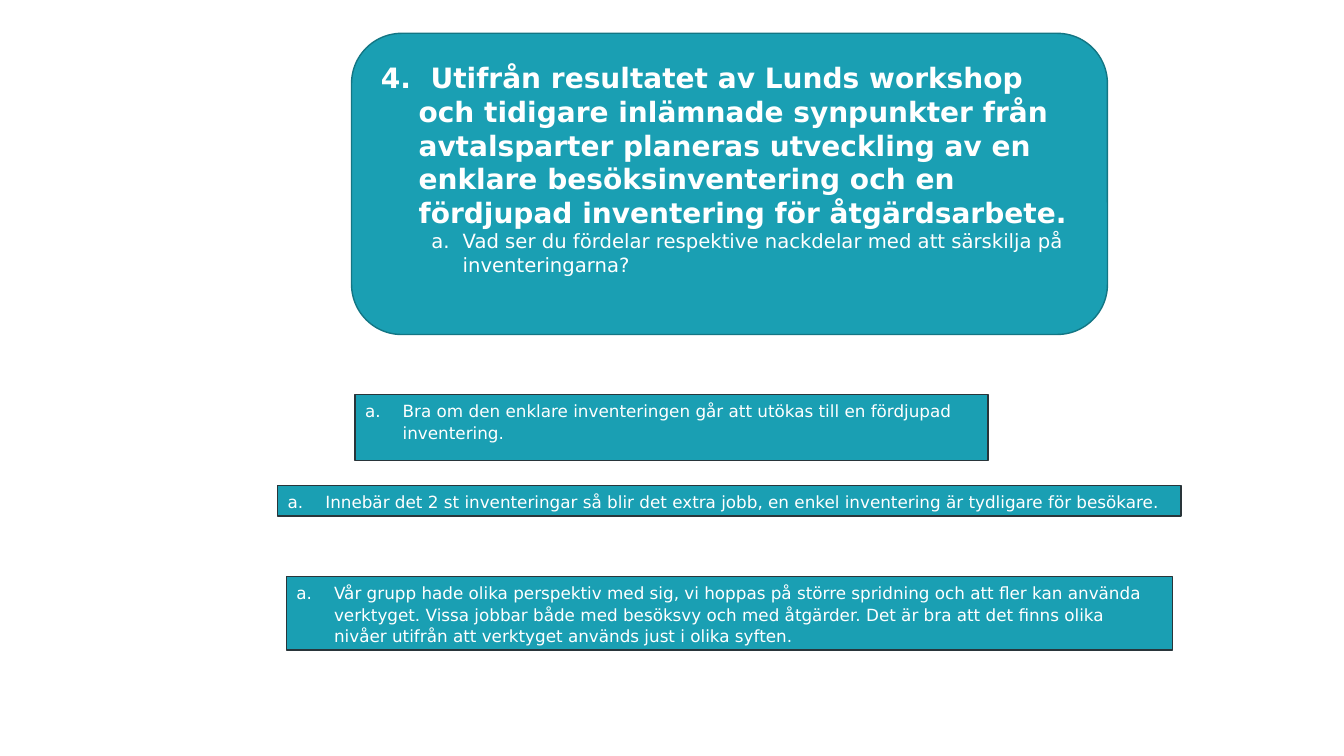
"""Builds a slide with a workshop question and three group answers."""
import pptx
import pptx.dml.color
import pptx.enum.shapes
import pptx.enum.text
import pptx.oxml.ns
import pptx.util
from lxml import etree

Cm = pptx.util.Cm
Pt = pptx.util.Pt
SHAPES = pptx.enum.shapes.MSO_SHAPE

FONT = "DejaVu Sans"
TEAL, DARK_TEAL, SLATE, WHITE = "1A9FB3", "137684", "29353A", "FFFFFF"

QUESTION_PANEL = (8.86, 0.84, 19.05, 7.59)
QUESTION_TEXT = (9.35, 1.41, 18.08, 5.7)
QUESTION = (
    "4.  Utifrån resultatet av Lunds workshop och tidigare inlämnade "
    "synpunkter från avtalsparter planeras utveckling av en enklare "
    "besöksinventering och en fördjupad inventering för åtgärdsarbete."
)
SUBQUESTION = "Vad ser du fördelar respektive nackdelar med att särskilja på inventeringarna?"

ANSWERS = [
    ((8.95, 9.94, 15.95, 1.66),
     "Bra om den enklare inventeringen går att utökas till en fördjupad inventering."),
    ((7.0, 12.24, 22.76, 0.76),
     "Innebär det 2 st inventeringar så blir det extra jobb, "
     "en enkel inventering är tydligare för besökare."),
    ((7.22, 14.53, 22.33, 1.85),
     "Vår grupp hade olika perspektiv med sig, vi hoppas på större spridning "
     "och att fler kan använda verktyget. Vissa jobbar både med besöksvy och "
     "med åtgärder. Det är bra att det finns olika nivåer utifrån att "
     "verktyget används just i olika syften."),
]


def color(hex_code):
    return pptx.dml.color.RGBColor.from_string(hex_code)


def add_panel(slide, kind, box, line_color):
    shape = slide.shapes.add_shape(kind, *map(Cm, box))
    shape.shadow.inherit = False
    shape.fill.solid()
    shape.fill.fore_color.rgb = color(TEAL)
    shape.line.color.rgb = color(line_color)
    shape.line.width = Pt(1)
    return shape


def format_paragraph(paragraph, size, left, hanging, lettered=True, bold=False):
    paragraph.alignment = pptx.enum.text.PP_ALIGN.LEFT
    for run in paragraph.runs:
        run.font.name = FONT
        run.font.size = Pt(size)
        run.font.bold = bold
        run.font.color.rgb = color(WHITE)
    properties = paragraph._p.get_or_add_pPr()
    properties.set("marL", str(Cm(left)))
    properties.set("indent", str(-Cm(hanging)))
    if lettered:
        numbering = etree.SubElement(properties, pptx.oxml.ns.qn("a:buAutoNum"))
        numbering.set("type", "alphaLcPeriod")


def add_question(slide):
    add_panel(slide, SHAPES.ROUNDED_RECTANGLE, QUESTION_PANEL, DARK_TEAL)
    text_frame = slide.shapes.add_textbox(*map(Cm, QUESTION_TEXT)).text_frame
    text_frame.word_wrap = True
    text_frame.text = QUESTION
    format_paragraph(text_frame.paragraphs[0], 20, 0.95, 0.95, lettered=False, bold=True)
    paragraph = text_frame.add_paragraph()
    paragraph.text = SUBQUESTION
    paragraph.level = 1
    format_paragraph(paragraph, 14, 2.06, 0.79)


def add_answer(slide, box, text):
    text_frame = add_panel(slide, SHAPES.RECTANGLE, box, SLATE).text_frame
    text_frame.word_wrap = True
    text_frame.vertical_anchor = pptx.enum.text.MSO_ANCHOR.TOP
    text_frame.text = text
    paragraph = text_frame.paragraphs[0]
    paragraph.line_spacing = 1.07
    paragraph.space_after = Pt(8)
    format_paragraph(paragraph, 12, 0.95, 0.95)


def main():
    presentation = pptx.Presentation()
    presentation.slide_width = Cm(33.87)
    presentation.slide_height = Cm(19.05)
    slide = presentation.slides.add_slide(presentation.slide_layouts[6])
    add_question(slide)
    for box, text in ANSWERS:
        add_answer(slide, box, text)
    presentation.save("out.pptx")


if __name__ == "__main__":
    main()
